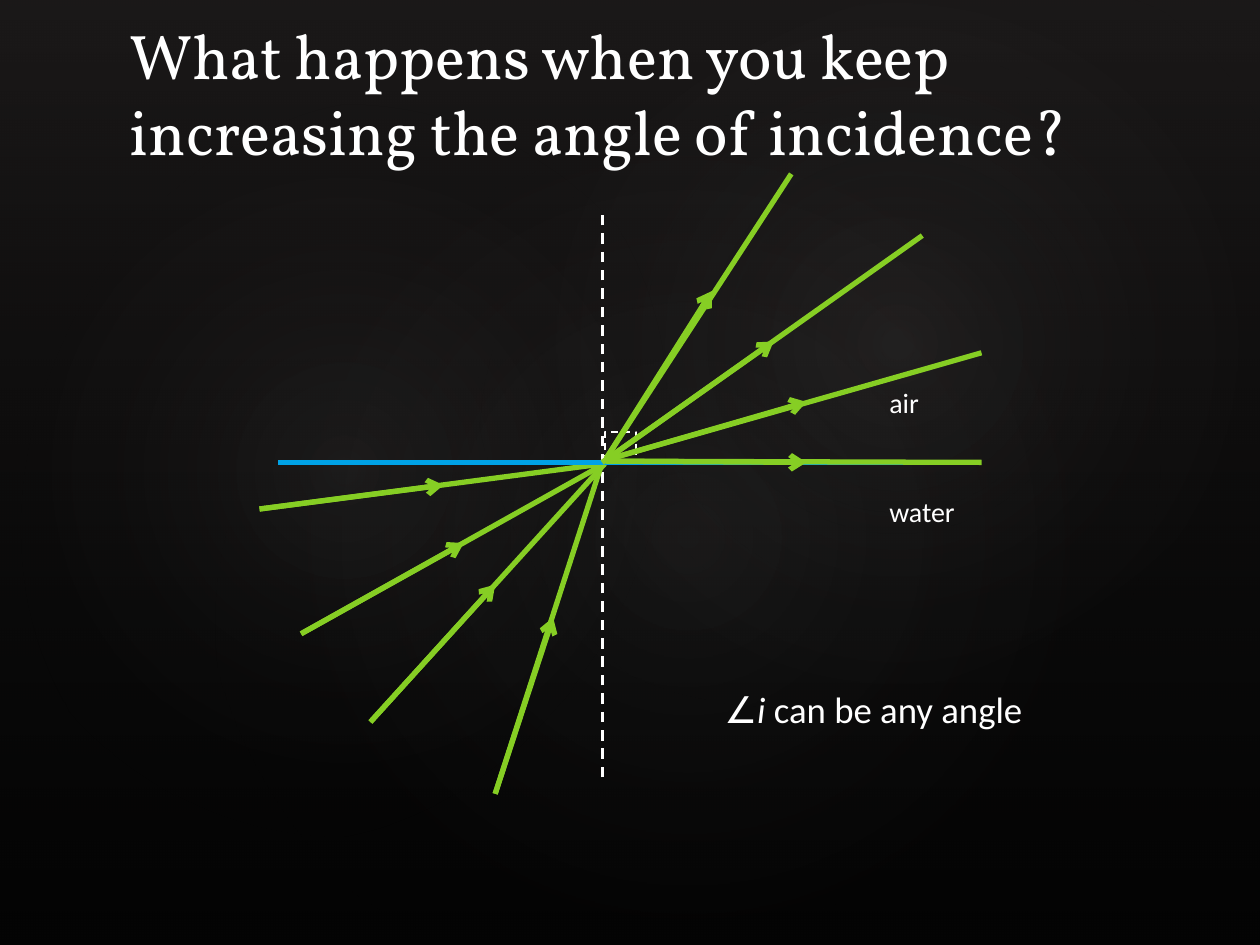
from typing import NamedTuple

from lxml import etree
from pptx import Presentation
from pptx import util as u
from pptx.dml.color import RGBColor
from pptx.enum import dml, shapes, text
from pptx.oxml import parse_xml
from pptx.oxml.ns import nsdecls, qn

WHITE, GREEN, BLUE = "FFFFFF", "86CE24", "00A2E6"


class Point(NamedTuple):
    x: float
    y: float


class Ray(NamedTuple):
    start: Point
    end: Point
    arrow: Point


class Glow(NamedTuple):
    left: float
    top: float
    width: float
    height: float
    rotation: float
    opacity: int


class Label(NamedTuple):
    left: float
    top: float
    width: float
    height: float
    phrases: tuple[str, ...]
    size: int
    font: str = "Calibri"
    anchor: text.MSO_ANCHOR = text.MSO_ANCHOR.TOP
    wrap: bool = True


INCIDENT_RAYS = [
    Ray(Point(3.93, 6.3), Point(4.78, 3.67), Point(4.39, 4.9)),
    Ray(Point(2.94, 5.73), Point(4.8, 3.68), Point(3.93, 4.64)),
    Ray(Point(2.39, 5.03), Point(4.8, 3.68), Point(3.68, 4.31)),
    Ray(Point(2.06, 4.04), Point(4.8, 3.68), Point(3.52, 3.85)),
]
REFRACTED_RAYS = [
    Ray(Point(4.81, 3.64), Point(6.28, 1.38), Point(5.65, 2.31)),
    Ray(Point(4.78, 3.67), Point(7.32, 1.87), Point(6.14, 2.71)),
    Ray(Point(4.81, 3.65), Point(7.79, 2.8), Point(6.4, 3.19)),
    Ray(Point(4.81, 3.66), Point(7.79, 3.67), Point(6.4, 3.67)),
]
GLOWS = [
    Glow(1.5, 1.14, 7.92, 6.24, 328.7, 7),
    Glow(-0.3, 1.28, 6.06, 4.9, 294.3, 8),
    Glow(3.58, 0.13, 7.09, 5.2, 328.7, 8),
]
LABELS = [
    Label(0.93, 0.68, 8.25, 0.7,
          ("What happens when you keep increasing the angle of incidence?",),
          36, "Vollkorn", text.MSO_ANCHOR.BOTTOM),
    Label(6.96, 3.01, 0.44, 0.37, ("air",), 16, wrap=False),
    Label(6.96, 3.88, 0.94, 0.37, ("water",), 16),
    Label(5.65, 5.4, 3.34, 0.45, ("∠", "i ", "can be any angle"), 21),
]


def rgb(color: str) -> RGBColor:
    return RGBColor.from_string(color)


def add_area(slide, kind, left: float, top: float, width: float, height: float):
    area = slide.shapes.add_shape(kind, *map(u.Inches, (left, top, width, height)))
    area.shadow.inherit = False
    area.fill.background()
    area.line.fill.background()
    return area


def fade(area, stops: list[tuple[int, str, int]], direction: str) -> None:
    """Fill with a gradient of (position, colour, opacity) stops, in percent."""
    stop_xml = "".join(
        f'<a:gs pos="{pos * 1000}"><a:srgbClr val="{color}">'
        f'<a:alpha val="{opacity * 1000}"/></a:srgbClr></a:gs>'
        for pos, color, opacity in stops)
    gradient = parse_xml(f'<a:gradFill {nsdecls("a")} rotWithShape="1">'
                         f'<a:gsLst>{stop_xml}</a:gsLst>{direction}</a:gradFill>')
    properties = area._element.spPr
    properties.replace(properties.find(qn("a:noFill")), gradient)


def add_backdrop(slide) -> None:
    slide.background.fill.solid()
    slide.background.fill.fore_color.rgb = rgb("000000")
    sheen = add_area(slide, shapes.MSO_SHAPE.RECTANGLE, 0, 0, 10, 7.5)
    fade(sheen, [(0, "4B4545", 36), (100, "282828", 10)],
         '<a:lin ang="5400000" scaled="0"/>')
    for glow in GLOWS:
        halo = add_area(slide, shapes.MSO_SHAPE.OVAL, *glow[:4])
        halo.rotation = glow.rotation
        fade(halo, [(0, "BFB9B9", glow.opacity), (58, "282828", 0)],
             '<a:path path="circle"><a:fillToRect l="50000" t="50000" '
             'r="50000" b="50000"/></a:path>')


def add_line(slide, start: Point, end: Point, color: str, weight: float,
             dashed: bool = False, arrow: bool = False) -> None:
    line = slide.shapes.add_connector(
        shapes.MSO_CONNECTOR.STRAIGHT, *map(u.Inches, (*start, *end)))
    line.line.color.rgb = rgb(color)
    line.line.width = u.Pt(weight)
    if dashed:
        line.line.dash_style = dml.MSO_LINE.DASH
    properties = line._element.spPr
    if arrow:
        etree.SubElement(properties.find(qn("a:ln")), qn("a:tailEnd"), type="arrow")
    etree.SubElement(properties, qn("a:effectLst"))


def add_rays(slide, rays: list[Ray]) -> None:
    for ray in rays:
        add_line(slide, ray.start, ray.end, GREEN, 3)
        add_line(slide, ray.start, ray.arrow, GREEN, 3, arrow=True)


def add_label(slide, label: Label) -> None:
    frame = slide.shapes.add_textbox(*map(u.Inches, label[:4])).text_frame
    frame.word_wrap = label.wrap
    frame.vertical_anchor = label.anchor
    for phrase in label.phrases:
        run = frame.paragraphs[0].add_run()
        run.text = phrase
        run.font.name = label.font
        run.font.size = u.Pt(label.size)
        run.font.color.rgb = rgb(WHITE)
        run.font.italic = phrase == "i "


def main() -> None:
    deck = Presentation()
    deck.slide_width, deck.slide_height = u.Inches(10), u.Inches(7.5)
    slide = deck.slides.add_slide(deck.slide_layouts[6])

    add_backdrop(slide)
    right_angle = add_area(slide, shapes.MSO_SHAPE.RECTANGLE, 4.8, 3.43, 0.25, 0.25)
    right_angle.line.color.rgb = rgb(WHITE)
    right_angle.line.width = u.Pt(1)
    right_angle.line.dash_style = dml.MSO_LINE.DASH
    right_angle.rotation = 270

    add_line(slide, Point(4.78, 6.17), Point(4.78, 1.68), WHITE, 1.5, dashed=True)
    add_rays(slide, INCIDENT_RAYS)
    add_line(slide, Point(2.21, 3.67), Point(7.43, 3.67), BLUE, 3)
    add_rays(slide, REFRACTED_RAYS)
    for label in LABELS:
        add_label(slide, label)
    deck.save("out.pptx")


if __name__ == "__main__":
    main()
